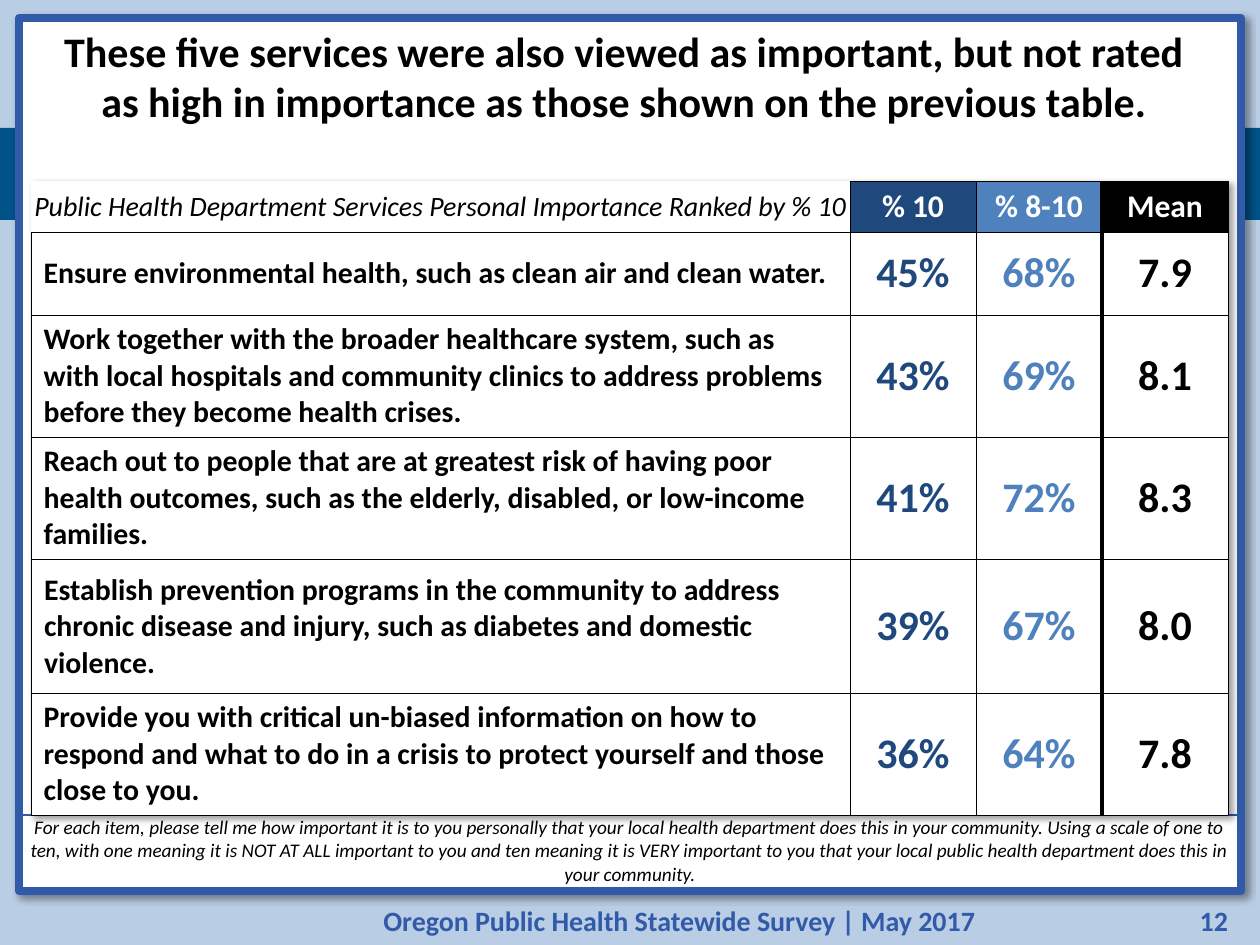
from lxml.etree import SubElement
from pptx import Presentation
from pptx.dml.color import RGBColor
from pptx.enum.shapes import MSO_SHAPE
from pptx.enum.text import MSO_ANCHOR as ANCHOR, PP_ALIGN as ALIGN
from pptx.oxml import parse_xml
from pptx.oxml.ns import nsdecls, qn
from pptx.util import Emu, Pt

EMU_PER_PX = 914400 / 126
FONT = "Calibri"
COLORS = {
    "page": "B9CDE5", "band": "02528A", "frame": "315BA8", "white": "FFFFFF",
    "black": "000000", "navy": "1F497D", "blue": "4F81BD",
}
TITLE = ("These five services were also viewed as important, but not rated "
         "as high in importance as those shown on the previous table.")
QUESTION = (
    "For each item, please tell me how important it is to you personally that your "
    "local health department does this in your community. Using a scale of one to ten, "
    "with one meaning it is NOT AT ALL important to you and ten meaning it is VERY "
    "important to you that your local public health department does this in your community.")
HEADER = ("Public Health Department Services Personal Importance Ranked by % 10",
          "% 10", "% 8-10", "Mean")
SERVICES = [
    ("Ensure environmental health, such as clean air and clean water.",
     "45%", "68%", "7.9"),
    ("Work together with the broader healthcare system, such as with local hospitals "
     "and community clinics to address problems before they become health crises.",
     "43%", "69%", "8.1"),
    ("Reach out to people that are at greatest risk of having poor health outcomes, "
     "such as the elderly, disabled, or low-income families.",
     "41%", "72%", "8.3"),
    ("Establish prevention programs in the community to address chronic disease and "
     "injury, such as diabetes and domestic violence.",
     "39%", "67%", "8.0"),
    ("Provide you with critical un-biased information on how to respond and what to do "
     "in a crisis to protect yourself and those close to you.",
     "36%", "64%", "7.8"),
]
COL_WIDTHS = (819, 126, 126, 126)
ROW_HEIGHTS = (51, 83, 122, 122, 134, 122)
VALUE_COLORS = ("black", "navy", "blue", "black")
HEADER_FILLS = ("white", "navy", "blue", "black")
PADDED_ROW = 4


def px(n):
    return Emu(round(n * EMU_PER_PX))


def rgb(name):
    return RGBColor.from_string(COLORS[name])


def write(tf, text, size, color, align=ALIGN.CENTER, bold=False, italic=False):
    p = tf.paragraphs[0]
    p.alignment = align
    r = p.add_run()
    r.text = text
    font = r.font
    font.name, font.size, font.bold, font.italic = FONT, Pt(size), bold, italic
    font.color.rgb = rgb(color)


def set_margins(target, left, top, right, bottom):
    target.margin_left, target.margin_top = px(left), px(top)
    target.margin_right, target.margin_bottom = px(right), px(bottom)


def add_text(slide, box, margins, text, size, color, anchor=ANCHOR.MIDDLE, **style):
    sp = slide.shapes.add_textbox(*map(px, box))
    tf = sp.text_frame
    tf.word_wrap = True
    tf.vertical_anchor = anchor
    set_margins(tf, *margins)
    write(tf, text, size, color, **style)
    return sp


def add_rect(slide, box, fill):
    sp = slide.shapes.add_shape(MSO_SHAPE.RECTANGLE, *map(px, box))
    sp.shadow.inherit = False
    sp.fill.solid()
    sp.fill.fore_color.rgb = rgb(fill)
    sp.line.fill.background()
    return sp


def outline(sp, color, width):
    sp.line.color.rgb = rgb(color)
    sp.line.width = Pt(width)


def shadow_effect():
    return parse_xml(
        f'<a:effectLst {nsdecls("a")}>'
        f'<a:outerShdw blurRad="{Pt(4)}" dist="{Pt(3)}" dir="2700000" algn="tl" '
        f'rotWithShape="0"><a:srgbClr val="{COLORS["black"]}"><a:alpha val="40000"/>'
        '</a:srgbClr></a:outerShdw></a:effectLst>')


def set_borders(cell, widths):
    """Draw the left, right, top and bottom borders; a width of 0 hides one."""
    tc_pr = cell._tc.get_or_add_tcPr()
    for i, (side, width) in enumerate(zip("LRTB", widths)):
        ln = tc_pr.makeelement(qn(f"a:ln{side}"), {"w": str(Pt(width))})
        if width:
            fill = SubElement(ln, qn("a:solidFill"))
            SubElement(fill, qn("a:srgbClr"), val=COLORS["black"])
        else:
            SubElement(ln, qn("a:noFill"))
        tc_pr.insert(i, ln)


def style_cell(cell, row, col):
    is_header, is_label = row == 0, col == 0
    cell.vertical_anchor = ANCHOR.MIDDLE
    if is_header and is_label:
        set_margins(cell, 0, 6, 0, 6)
    elif row == PADDED_ROW and is_label:
        set_margins(cell, 13, 13, 13, 13)
    cell.fill.solid()
    cell.fill.fore_color.rgb = rgb(HEADER_FILLS[col] if is_header else "white")
    outer = 0 if is_header and is_label else 0.25
    set_borders(cell, (2.25 if col == 3 else outer, 2.25 if col == 2 else 0.25,
                       outer, 0.25))


def write_cell(cell, row, col, text):
    tf = cell.text_frame
    if row == 0 and col == 0:
        write(tf, text, 16, "black", italic=True)
    elif row == 0:
        write(tf, text, 18, "white", bold=True)
    elif col == 0:
        write(tf, text, 17, "black", align=ALIGN.LEFT, bold=True)
    else:
        write(tf, text, 24, VALUE_COLORS[col], bold=True)


def add_services_table(slide, left, top):
    rows = [HEADER, *SERVICES]
    frame = slide.shapes.add_table(len(rows), len(HEADER), px(left), px(top),
                                   px(sum(COL_WIDTHS)), px(sum(ROW_HEIGHTS)))
    table = frame.table
    table.horz_banding = False
    table._tbl.tblPr.insert(0, shadow_effect())
    for column, width in zip(table.columns, COL_WIDTHS):
        column.width = px(width)
    for row, height in zip(table.rows, ROW_HEIGHTS):
        row.height = px(height)
    for r, texts in enumerate(rows):
        for c, text in enumerate(texts):
            cell = table.cell(r, c)
            style_cell(cell, r, c)
            write_cell(cell, r, c, text)


def add_frame(slide):
    """Add the band, the shadowed white panel and the footer line."""
    add_rect(slide, (0, 128, 1260, 92), "band")
    for box, text, align in (((204, 897, 951, 47), "Oregon Public Health Statewide Survey | May 2017",
                              ALIGN.CENTER),
                             ((1155, 897, 86, 47), "12", ALIGN.RIGHT)):
        add_text(slide, box, (13, 6, 13, 6), text, 16, "frame", align=align, bold=True)
    panel = add_rect(slide, (19, 18, 1222, 873), "white")
    outline(panel, "frame", 4.5)
    sp_pr = panel._element.spPr
    sp_pr.replace(sp_pr.find(qn("a:effectLst")), shadow_effect())


def main():
    prs = Presentation()
    prs.slide_width, prs.slide_height = px(1260), px(945)
    slide = prs.slides.add_slide(prs.slide_layouts[6])
    slide.background.fill.solid()
    slide.background.fill.fore_color.rgb = rgb("page")
    add_frame(slide)
    question = add_text(slide, (19, 815, 1222, 76), (9, 0, 9, 6), QUESTION, 11, "black",
                        anchor=ANCHOR.BOTTOM, italic=True)
    outline(question, "frame", 0.75)
    add_services_table(slide, 31, 181)
    add_text(slide, (40, 32, 1168, 87), (5, 6, 5, 6), TITLE, 24, "black", bold=True)
    prs.save("out.pptx")


if __name__ == "__main__":
    main()
